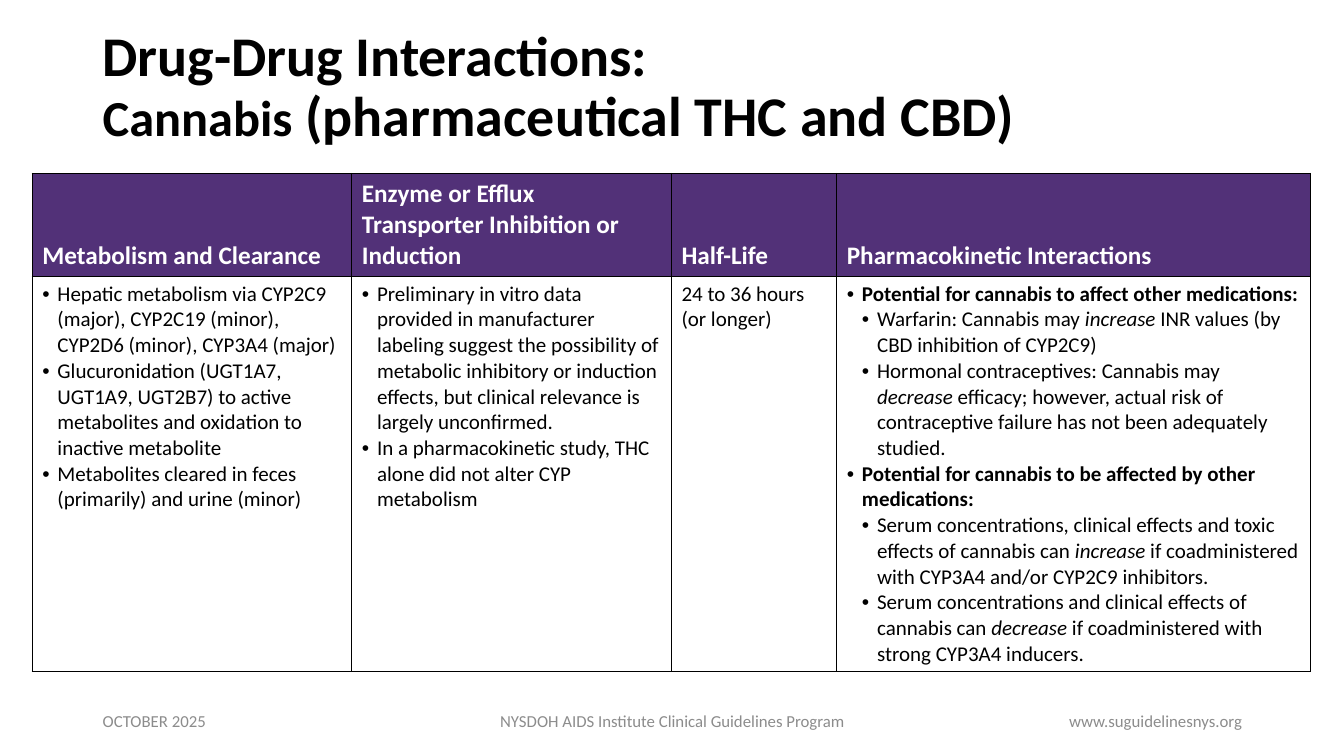
from dataclasses import dataclass

import pptx
import pptx.dml.color
import pptx.enum.text
import pptx.oxml
import pptx.oxml.ns
import pptx.util

PX = 9144  # EMU per px, 100 px to the inch
PP = pptx.enum.text.PP_ALIGN
ANCHOR = pptx.enum.text.MSO_ANCHOR


@dataclass(frozen=True)
class Theme:
    font: str = "Calibri"
    black: str = "000000"
    white: str = "FFFFFF"
    purple: str = "523178"
    gray: str = "8C8C8C"
    title: int = 40
    subtitle: int = 36
    header: int = 18
    body: int = 15
    footer: int = 12


@dataclass(frozen=True)
class Item:
    """A table paragraph; level 0 has no bullet, *stars* mark italics."""
    text: str
    level: int = 1
    bold: bool = False


@dataclass(frozen=True)
class Column:
    heading: str
    width: int
    items: tuple[Item, ...]


@dataclass(frozen=True)
class Footer:
    text: str
    left: int
    width: int
    align: PP


THEME = Theme()
INDENT = 15
TABLE_LEFT, TABLE_TOP = 32, 172
HEADER_HEIGHT, BODY_HEIGHT = 102, 392

COLUMNS = (
    Column("Metabolism and Clearance", 317, (
        Item("Hepatic metabolism via CYP2C9 (major), CYP2C19 (minor), CYP2D6 (minor), CYP3A4 (major)"),
        Item("Glucuronidation (UGT1A7, UGT1A9, UGT2B7) to active metabolites and oxidation to "
             "inactive metabolite"),
        Item("Metabolites cleared in feces (primarily) and urine (minor)"),
    )),
    Column("Enzyme or Efflux Transporter Inhibition or Induction", 317, (
        Item("Preliminary in vitro data provided in manufacturer labeling suggest the possibility of "
             "metabolic inhibitory or induction effects, but clinical relevance is largely unconfirmed."),
        Item("In a pharmacokinetic study, THC alone did not alter CYP metabolism"),
    )),
    Column("Half-Life", 164, (Item("24 to 36 hours \n(or longer)", level=0),)),
    Column("Pharmacokinetic Interactions", 470, (
        Item("Potential for cannabis to affect other medications:", bold=True),
        Item("Warfarin: Cannabis may *increase* INR values (by CBD inhibition of CYP2C9)", level=2),
        Item("Hormonal contraceptives: Cannabis may *decrease* efficacy; however, actual risk of "
             "contraceptive failure has not been adequately studied.", level=2),
        Item("Potential for cannabis to be affected by other medications:", bold=True),
        Item("Serum concentrations, clinical effects and toxic effects of cannabis can *increase* "
             "if coadministered with CYP3A4 and/or CYP2C9 inhibitors.", level=2),
        Item("Serum concentrations and clinical effects of cannabis can *decrease* "
             "if coadministered with strong CYP3A4 inducers.", level=2),
    )),
)

FOOTERS = (
    Footer("OCTOBER 2025", 92, 300, PP.LEFT),
    Footer("NYSDOH AIDS Institute Clinical Guidelines Program", 442, 450, PP.CENTER),
    Footer("www.suguidelinesnys.org", 942, 300, PP.RIGHT),
)


def px(value: int) -> pptx.util.Emu:
    return pptx.util.Emu(value * PX)


def rgb(color: str) -> pptx.dml.color.RGBColor:
    return pptx.dml.color.RGBColor.from_string(color)


def set_font(p, size: int, color: str, bold: bool = False) -> None:
    p.font.name = THEME.font
    p.font.size = pptx.util.Pt(size)
    p.font.color.rgb = rgb(color)
    p.font.bold = bold


def add_text_box(s, left: int, top: int, width: int, height: int):
    tf = s.shapes.add_textbox(px(left), px(top), px(width), px(height)).text_frame
    tf.word_wrap = True
    tf.vertical_anchor = ANCHOR.MIDDLE
    return tf


def add_title(s) -> None:
    p = add_text_box(s, 92, 15, 1063, 145).paragraphs[0]
    p.line_spacing = 0.9
    set_font(p, THEME.title, THEME.black, bold=True)
    p.add_run().text = "Drug-Drug Interactions:"
    p.add_line_break()
    r = p.add_run()
    r.text = "Cannabis"
    r.font.size = pptx.util.Pt(THEME.subtitle)
    p.add_run().text = " (pharmaceutical THC and CBD)"


def add_footer(s, footer: Footer) -> None:
    p = add_text_box(s, footer.left, 695, footer.width, 40).paragraphs[0]
    p.text = footer.text
    p.alignment = footer.align
    set_font(p, THEME.footer, THEME.gray)


def add_borders(cell) -> None:
    tc_pr = cell._tc.get_or_add_tcPr()
    for side in "LRTB":
        tc_pr.append(pptx.oxml.parse_xml(
            f'<a:ln{side} {pptx.oxml.ns.nsdecls("a")} w="12700"><a:solidFill>'
            f'<a:srgbClr val="{THEME.black}"/></a:solidFill></a:ln{side}>'))


def add_bullet(p, level: int) -> None:
    p.level = level - 1
    p_pr = p._p.get_or_add_pPr()
    p_pr.set("marL", str(px(INDENT * level)))
    p_pr.set("indent", str(-px(INDENT)))
    ns = pptx.oxml.ns.nsdecls("a")
    p_pr.append(pptx.oxml.parse_xml(f'<a:buFont {ns} typeface="Arial"/>'))
    p_pr.append(pptx.oxml.parse_xml(f'<a:buChar {ns} char="•"/>'))


def fill_item(p, item: Item) -> None:
    if item.level:
        add_bullet(p, item.level)
    set_font(p, THEME.body, THEME.black, item.bold)
    if "*" not in item.text:
        p.text = item.text.replace("\n", "\v")
        return
    for i, part in enumerate(item.text.split("*")):
        r = p.add_run()
        r.text = part
        if i % 2:
            r.font.italic = True


def fill_column(head, body, column: Column) -> None:
    for cell in (head, body):
        add_borders(cell)
    head.fill.solid()
    head.fill.fore_color.rgb = rgb(THEME.purple)
    head.vertical_anchor = ANCHOR.BOTTOM
    p = head.text_frame.paragraphs[0]
    p.text = column.heading
    set_font(p, THEME.header, THEME.white, bold=True)
    body.fill.background()
    tf = body.text_frame
    for i, item in enumerate(column.items):
        fill_item(tf.add_paragraph() if i else tf.paragraphs[0], item)


def add_interactions_table(s) -> None:
    width = sum(column.width for column in COLUMNS)
    table = s.shapes.add_table(2, len(COLUMNS), px(TABLE_LEFT), px(TABLE_TOP), px(width),
                               px(HEADER_HEIGHT + BODY_HEIGHT)).table
    table.first_row = table.horz_banding = False
    table.rows[0].height = px(HEADER_HEIGHT)
    table.rows[1].height = px(BODY_HEIGHT)
    for i, column in enumerate(COLUMNS):
        table.columns[i].width = px(column.width)
        fill_column(table.cell(0, i), table.cell(1, i), column)


def main() -> None:
    prs = pptx.Presentation()
    prs.slide_width, prs.slide_height = px(1333), px(750)
    s = prs.slides.add_slide(prs.slide_layouts[6])
    add_title(s)
    add_interactions_table(s)
    for footer in FOOTERS:
        add_footer(s, footer)
    prs.save("out.pptx")


if __name__ == "__main__":
    main()
